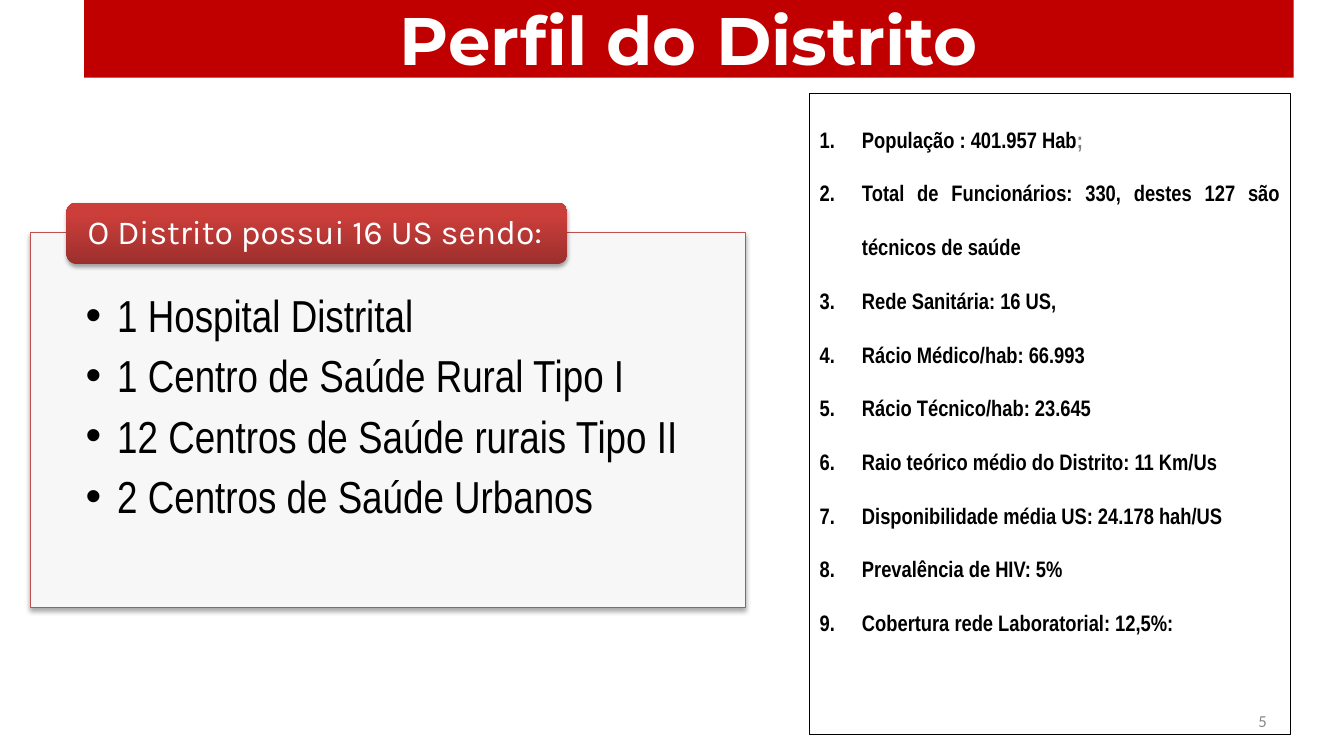
from dataclasses import dataclass
from typing import Any

from pptx import Presentation
from pptx.dml.color import RGBColor
from pptx.enum.shapes import MSO_SHAPE
from pptx.enum.text import MSO_ANCHOR, MSO_AUTO_SIZE, PP_ALIGN
from pptx.oxml import parse_xml
from pptx.oxml.ns import nsdecls, qn
from pptx.util import Pt

COLORS = {
    "red": "C00000", "edge": "C0504D", "panel": "F7F7F7", "white": "FFFFFF",
    "black": "000000", "gray": "7F7F7F", "page": "898989",
    "dark": "9C2F2D", "light": "CB3E3A",
}
NARROW = "Arial Narrow"
BULLET = ('<a:buFont {ns} typeface="Arial"/>', '<a:buChar {ns} char="•"/>')
NUMBER = ('<a:buFont {ns} typeface="+mj-lt"/>',
          '<a:buAutoNum {ns} type="arabicPeriod"/>')


@dataclass(frozen=True)
class Box:
    left: float
    top: float
    width: float
    height: float


@dataclass(frozen=True)
class Listing:
    slot: int
    box: Box
    edge: str
    inset: tuple[float, float, float, float]
    mark: tuple[str, str]
    indent: float
    style: dict[str, Any]
    items: tuple[str, ...]


LISTS = (
    Listing(1, Box(21.6, 166.3, 511.2, 267.8), "edge", (39.6, 39.1, 39.6, 18),
            BULLET, 22.5, {"size": 32, "after": 4.8},
            ("1 Hospital Distrital",
             "1 Centro de Saúde Rural Tipo I",
             "12 Centros de Saúde rurais Tipo II",
             "2 Centros de Saúde Urbanos")),
    Listing(2, Box(578.2, 67, 343.4, 457.9), "black", (7.2, 3.6, 7.2, 3.6),
            NUMBER, 30.3,
            {"size": 16, "bold": True, "align": PP_ALIGN.JUSTIFY, "line": 2.0},
            ("População : 401.957 Hab",
             "Total de Funcionários: 330, destes 127 são técnicos de saúde",
             "Rede Sanitária: 16 US,",
             "Rácio Médico/hab: 66.993",
             "Rácio Técnico/hab: 23.645",
             "Raio teórico médio do Distrito: 11 Km/Us",
             "Disponibilidade média US: 24.178 hah/US",
             "Prevalência de HIV: 5%",
             "Cobertura rede Laboratorial: 12,5%:")),
)


def color(name: str) -> RGBColor:
    return RGBColor.from_string(COLORS[name])


def place(shape: Any, box: Box) -> None:
    shape.left, shape.top = Pt(box.left), Pt(box.top)
    shape.width, shape.height = Pt(box.width), Pt(box.height)


def setup(frame: Any, inset: tuple[float, float, float, float],
          anchor: MSO_ANCHOR) -> None:
    frame.word_wrap = True
    frame.auto_size = MSO_AUTO_SIZE.NONE
    frame.vertical_anchor = anchor
    frame.margin_left, frame.margin_top = Pt(inset[0]), Pt(inset[1])
    frame.margin_right, frame.margin_bottom = Pt(inset[2]), Pt(inset[3])


def write(para: Any, text: str, *, size: float, font: str = NARROW,
          tint: str = "black", bold: bool = False,
          align: PP_ALIGN = PP_ALIGN.LEFT, line: float = 1.0,
          after: float = 0) -> None:
    para.alignment, para.line_spacing = align, line
    para.space_before, para.space_after = Pt(0), Pt(after)
    run = para.add_run()
    run.text = text
    run.font.name, run.font.size, run.font.bold = font, Pt(size), bold
    run.font.color.rgb = color(tint)


def shade(shape: Any) -> None:
    shape.shadow.inherit = False
    effects = shape._element.spPr.find(qn("a:effectLst"))
    effects.append(parse_xml(
        f'<a:outerShdw {nsdecls("a")} blurRad="{Pt(3.1)}" dist="{Pt(1.8)}" '
        'dir="5400000" rotWithShape="0"><a:srgbClr val="000000">'
        '<a:alpha val="35000"/></a:srgbClr></a:outerShdw>'))


def mark(para: Any, parts: tuple[str, str], indent: float) -> None:
    props = para._p.get_or_add_pPr()
    props.set("marL", str(Pt(indent)))
    props.set("indent", str(-Pt(indent)))
    for part in parts:
        props.append(parse_xml(part.format(ns=nsdecls("a"))))


def fill_list(slide: Any, data: Listing) -> Any:
    body = slide.placeholders[data.slot]
    place(body, data.box)
    body.line.color.rgb = color(data.edge)
    body.line.width = Pt(0.75)
    frame = body.text_frame
    setup(frame, data.inset, MSO_ANCHOR.TOP)
    for i, item in enumerate(data.items):
        para = frame.paragraphs[0] if i == 0 else frame.add_paragraph()
        write(para, item, **data.style)
        mark(para, data.mark, data.indent)
    return body


def main() -> None:
    deck = Presentation()
    deck.slide_width, deck.slide_height = Pt(960), Pt(540)
    slide = deck.slides.add_slide(deck.slide_layouts[3])

    # Title band
    title = slide.shapes.title
    place(title, Box(60, 0, 864, 55.5))
    title.fill.solid()
    title.fill.fore_color.rgb = color("red")
    setup(title.text_frame, (7.2, 3.6, 7.2, 3.6), MSO_ANCHOR.MIDDLE)
    write(title.text_frame.paragraphs[0], "Perfil do Distrito", size=48,
          font="Montserrat", tint="white", bold=True, align=PP_ALIGN.CENTER)

    # Health units panel and district facts
    units, facts = (fill_list(slide, data) for data in LISTS)
    units.fill.solid()
    units.fill.fore_color.rgb = color("panel")
    shade(units)
    first = facts.text_frame.paragraphs[0]
    write(first, ";", tint="gray", **LISTS[1].style)

    # Panel heading
    badge = slide.shapes.add_shape(MSO_SHAPE.ROUNDED_RECTANGLE, 0, 0, 0, 0)
    place(badge, Box(47.5, 144.7, 357.8, 43.9))
    badge.fill.gradient()
    badge.fill.gradient_angle = 90
    low, high = badge.fill.gradient_stops
    low.color.rgb, low.position = color("dark"), 0
    high.color.rgb, high.position = color("light"), 0.8
    badge.line.fill.background()
    shade(badge)
    setup(badge.text_frame, (13, 0, 2, 0), MSO_ANCHOR.MIDDLE)
    write(badge.text_frame.paragraphs[0], "O Distrito possui 16 US sendo:",
          size=24, font="Karla", tint="white", line=0.9)

    # Page number
    page = slide.shapes.add_textbox(0, 0, 0, 0)
    place(page, Box(688, 500.5, 224, 28.8))
    setup(page.text_frame, (7.2, 3.6, 7.2, 3.6), MSO_ANCHOR.MIDDLE)
    write(page.text_frame.paragraphs[0], "5", size=12, font="Calibri",
          tint="page", align=PP_ALIGN.RIGHT)

    deck.save("out.pptx")


if __name__ == "__main__":
    main()
